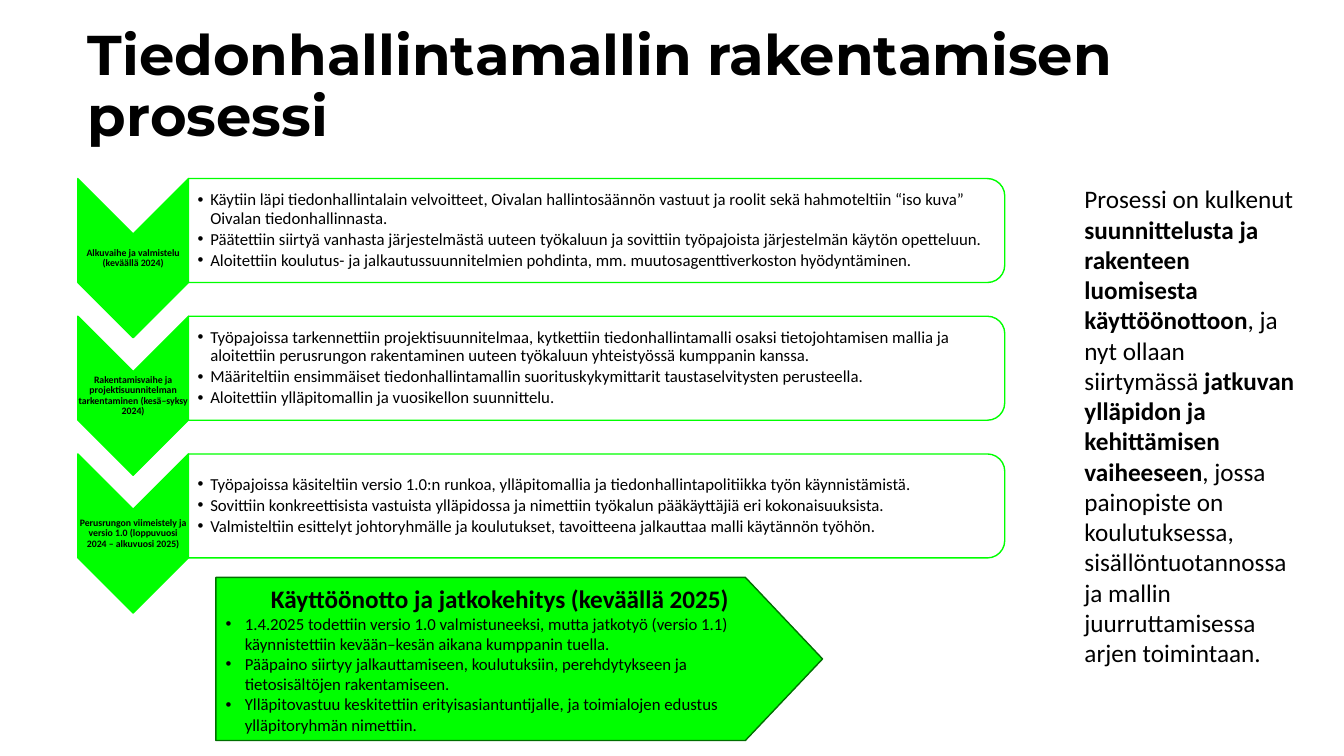
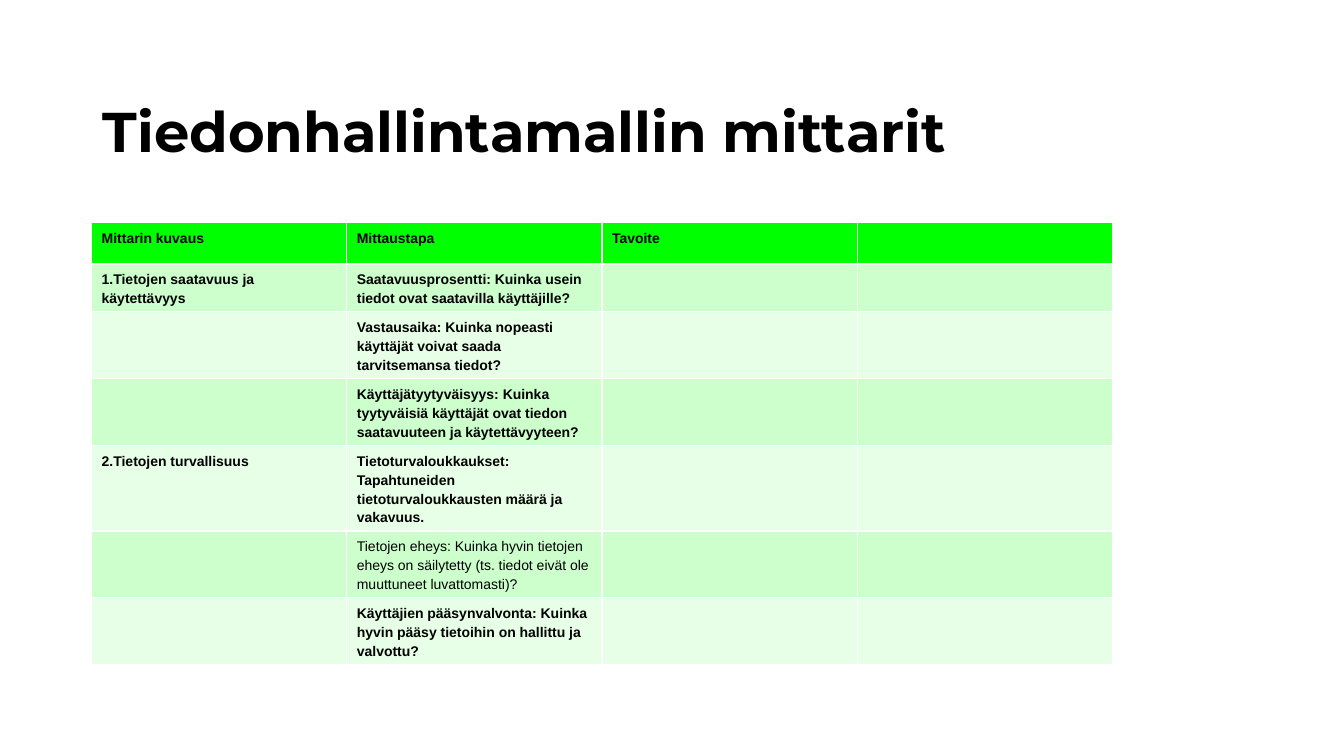
from collections.abc import Sequence
from typing import NamedTuple

from lxml.etree import SubElement
from pptx import Presentation
from pptx.dml.color import RGBColor
from pptx.enum.shapes import MSO_SHAPE
from pptx.enum.text import MSO_ANCHOR, MSO_AUTO_SIZE, PP_ALIGN
from pptx.oxml.ns import qn
from pptx.shapes.autoshape import Shape
from pptx.slide import Slide
from pptx.text.text import TextFrame
from pptx.util import Cm, Pt

BLACK, WHITE = "000000", "FFFFFF"
GREEN, DARK_GREEN = "00FF00", "007000"
BANDS = ("CCFFCC", "E7FFE7")
TITLE_FONT, BODY_FONT, TABLE_FONT = "Montserrat", "Calibri", "Arial"


class Box(NamedTuple):
    """Position and size in centimetres."""
    left: float
    top: float
    width: float
    height: float

    def lengths(self) -> tuple[Cm, ...]:
        return tuple(Cm(value) for value in self)


class Span(NamedTuple):
    text: str
    bold: bool = False


class Phase(NamedTuple):
    label: str
    points: tuple[str, ...]


class Measure(NamedTuple):
    method: str
    topic: str = ""
    bold: bool = True


PHASES = (
    Phase("Alkuvaihe ja valmistelu (keväällä 2024)", (
        "Käytiin läpi tiedonhallintalain velvoitteet, Oivalan hallintosäännön vastuut ja roolit "
        "sekä hahmoteltiin “iso kuva” Oivalan tiedonhallinnasta.",
        "Päätettiin siirtyä vanhasta järjestelmästä uuteen työkaluun ja sovittiin työpajoista "
        "järjestelmän käytön opetteluun.",
        "Aloitettiin koulutus- ja jalkautussuunnitelmien pohdinta, mm. muutosagenttiverkoston "
        "hyödyntäminen.",
    )),
    Phase("Rakentamisvaihe ja projektisuunnitelman tarkentaminen (kesä–syksy 2024)", (
        "Työpajoissa tarkennettiin projektisuunnitelmaa, kytkettiin tiedonhallintamalli osaksi "
        "tietojohtamisen mallia ja aloitettiin perusrungon rakentaminen uuteen työkaluun "
        "yhteistyössä kumppanin kanssa.",
        "Määriteltiin ensimmäiset tiedonhallintamallin suorituskykymittarit taustaselvitysten "
        "perusteella.",
        "Aloitettiin ylläpitomallin ja vuosikellon suunnittelu.",
    )),
    Phase("Perusrungon viimeistely ja versio 1.0 (loppuvuosi 2024 – alkuvuosi 2025)", (
        "Työpajoissa käsiteltiin versio 1.0:n runkoa, ylläpitomallia ja tiedonhallintapolitiikka "
        "työn käynnistämistä.",
        "Sovittiin konkreettisista vastuista ylläpidossa ja nimettiin työkalun pääkäyttäjiä eri "
        "kokonaisuuksista.",
        "Valmisteltiin esittelyt johtoryhmälle ja koulutukset, tavoitteena jalkauttaa malli "
        "käytännön työhön.",
    )),
)
ROLLOUT = Phase("Käyttöönotto ja jatkokehitys (keväällä 2025)", (
    "1.4.2025 todettiin versio 1.0 valmistuneeksi, mutta jatkotyö (versio 1.1) käynnistettiin "
    "kevään–kesän aikana kumppanin tuella.",
    "Pääpaino siirtyy jalkauttamiseen, koulutuksiin, perehdytykseen ja tietosisältöjen "
    "rakentamiseen.",
    "Ylläpitovastuu keskitettiin erityisasiantuntijalle, ja toimialojen edustus "
    "ylläpitoryhmän nimettiin.",
))
SUMMARY = (
    Span("Prosessi on kulkenut "),
    Span("suunnittelusta ja rakenteen luomisesta käyttöönottoon", True),
    Span(", ja nyt ollaan siirtymässä "),
    Span("jatkuvan ylläpidon ja kehittämisen vaiheeseen", True),
    Span(", jossa painopiste on koulutuksessa, sisällöntuotannossa ja mallin juurruttamisessa "
         "arjen toimintaan."),
)
HEADINGS = ("Mittarin kuvaus", "Mittaustapa", "Tavoite", "")
MEASURES = (
    Measure("Saatavuusprosentti: Kuinka usein tiedot ovat saatavilla käyttäjille?",
            "1.Tietojen saatavuus ja käytettävyys"),
    Measure("Vastausaika: Kuinka nopeasti käyttäjät voivat saada tarvitsemansa tiedot?"),
    Measure("Käyttäjätyytyväisyys: Kuinka tyytyväisiä käyttäjät ovat tiedon saatavuuteen ja "
            "käytettävyyteen?"),
    Measure("Tietoturvaloukkaukset: Tapahtuneiden tietoturvaloukkausten määrä ja vakavuus.",
            "2.Tietojen turvallisuus"),
    Measure("Tietojen eheys: Kuinka hyvin tietojen eheys on säilytetty (ts. tiedot eivät ole "
            "muuttuneet luvattomasti)?", bold=False),
    Measure("Käyttäjien pääsynvalvonta: Kuinka hyvin pääsy tietoihin on hallittu ja valvottu?"),
)


def color(value: str) -> RGBColor:
    return RGBColor.from_string(value)


def add_text(frame: TextFrame, text: str | Sequence[Span], *, size: float,
             font: str = BODY_FONT, bold: bool = False, align: PP_ALIGN = PP_ALIGN.LEFT,
             line_spacing: float | Pt | None = None, space_after: float = 0,
             bullet_indent: float = 0) -> None:
    """Add one paragraph, using the frame's first one while it is empty."""
    first = frame.paragraphs[0]
    paragraph = frame.add_paragraph() if first.runs else first
    if bullet_indent:
        properties = paragraph._p.get_or_add_pPr()
        properties.set("marL", str(Cm(bullet_indent)))
        properties.set("indent", str(-Cm(bullet_indent)))
        SubElement(properties, qn("a:buFont"), typeface="Arial")
        SubElement(properties, qn("a:buChar"), char="•")
    paragraph.alignment = align
    paragraph.line_spacing = line_spacing
    paragraph.space_before = Pt(0)
    paragraph.space_after = Pt(space_after)
    for span in [Span(text, bold)] if isinstance(text, str) else text:
        run = paragraph.add_run()
        run.text = span.text
        run.font.name = font
        run.font.size = Pt(size)
        run.font.bold = span.bold
        run.font.color.rgb = color(BLACK)


def add_frame(slide: Slide, box: Box, *, anchor: MSO_ANCHOR = MSO_ANCHOR.TOP,
              insets: tuple[float, float, float, float] = (0.25, 0.13, 0.25, 0.13)) -> TextFrame:
    """Add a wrapping text box; insets run left, top, right, bottom."""
    frame = slide.shapes.add_textbox(*box.lengths()).text_frame
    frame.word_wrap = True
    frame.vertical_anchor = anchor
    (frame.margin_left, frame.margin_top,
     frame.margin_right, frame.margin_bottom) = map(Cm, insets)
    return frame


def add_outline(slide: Slide, kind: MSO_SHAPE, box: Box, fill: str, line: str) -> Shape:
    shape = slide.shapes.add_shape(kind, *box.lengths())
    shape.shadow.inherit = False
    shape.fill.solid()
    shape.fill.fore_color.rgb = color(fill)
    shape.line.color.rgb = color(line)
    shape.line.width = Pt(1)
    return shape


def add_turned(slide: Slide, kind: MSO_SHAPE, box: Box, fill: str) -> None:
    """Add a green-lined shape turned clockwise so that it covers box."""
    shift = (box.width - box.height) / 2
    upright = Box(box.left + shift, box.top - shift, box.height, box.width)
    add_outline(slide, kind, upright, fill, GREEN).rotation = 90


def add_titled_slide(deck: Presentation, title: str, box: Box) -> Slide:
    slide = deck.slides.add_slide(deck.slide_layouts[5])
    holder = slide.shapes.title
    holder.left, holder.top, holder.width, holder.height = box.lengths()
    frame = holder.text_frame
    frame.word_wrap = True
    frame.auto_size = MSO_AUTO_SIZE.NONE
    frame.vertical_anchor = MSO_ANCHOR.MIDDLE
    add_text(frame, title, size=40, font=TITLE_FONT, bold=True, line_spacing=0.9)
    return slide


def add_phase(slide: Slide, phase: Phase, top: float) -> None:
    add_turned(slide, MSO_SHAPE.CHEVRON, Box(1.96, top, 2.79, 4.01), GREEN)
    label = add_frame(slide, Box(1.96, top + 1.41, 2.79, 1.19),
                      anchor=MSO_ANCHOR.MIDDLE, insets=(0, 0, 0, 0))
    add_text(label, phase.label, size=7, bold=True, align=PP_ALIGN.CENTER,
             line_spacing=0.9, space_after=2.5)
    add_turned(slide, MSO_SHAPE.ROUND_2_SAME_RECTANGLE, Box(4.75, top, 20.57, 2.62), WHITE)
    points = add_frame(slide, Box(4.75, top + 0.13, 20.45, 2.36),
                       anchor=MSO_ANCHOR.MIDDLE, insets=(0.23, 0.02, 0.02, 0.02))
    for point in phase.points:
        add_text(points, point, size=12, line_spacing=0.9, space_after=2, bullet_indent=0.32)


def add_rollout(slide: Slide) -> None:
    arrow = add_outline(slide, MSO_SHAPE.PENTAGON, Box(5.44, 14.55, 15.29, 4.11),
                        GREEN, DARK_GREEN)
    arrow.adjustments[0] = 0.473
    frame = arrow.text_frame
    frame.word_wrap = True
    frame.vertical_anchor = MSO_ANCHOR.MIDDLE
    add_text(frame, ROLLOUT.label, size=18, bold=True, align=PP_ALIGN.CENTER)
    for point in ROLLOUT.points:
        add_text(frame, point, size=12, bullet_indent=0.48)


def build_process(deck: Presentation) -> None:
    slide = add_titled_slide(deck, "Tiedonhallintamallin rakentamisen prosessi",
                             Box(1.96, 0.38, 29.01, 3.68))
    for index, phase in enumerate(PHASES):
        add_phase(slide, phase, 4.5 + 3.47 * index)
    add_rollout(slide)
    add_text(add_frame(slide, Box(27.08, 4.5, 5.89, 12.57)), SUMMARY, size=18)


def build_measures(deck: Presentation) -> None:
    slide = add_titled_slide(deck, "Tiedonhallintamallin mittarit",
                             Box(2.34, 1.55, 24.28, 3.68))
    rows = [HEADINGS] + [(item.topic, item.method, "", "") for item in MEASURES]
    bolds = [True] + [item.bold for item in MEASURES]
    fills = [GREEN] + [BANDS[index % 2] for index in range(len(MEASURES))]
    box = Box(2.31, 5.61, 25.72, 1.04 * len(rows))
    table = slide.shapes.add_table(len(rows), len(HEADINGS), *box.lengths()).table
    table.horz_banding = False
    for row, texts, bold, fill in zip(table.rows, rows, bolds, fills):
        for cell, text in zip(row.cells, texts):
            cell.fill.solid()
            cell.fill.fore_color.rgb = color(fill)
            if text:
                add_text(cell.text_frame, text, size=10, font=TABLE_FONT, bold=bold,
                         line_spacing=Pt(13.5))


def main() -> None:
    deck = Presentation()
    deck.slide_width, deck.slide_height = Cm(33.87), Cm(19.05)
    build_process(deck)
    build_measures(deck)
    deck.save("out.pptx")


if __name__ == "__main__":
    main()
